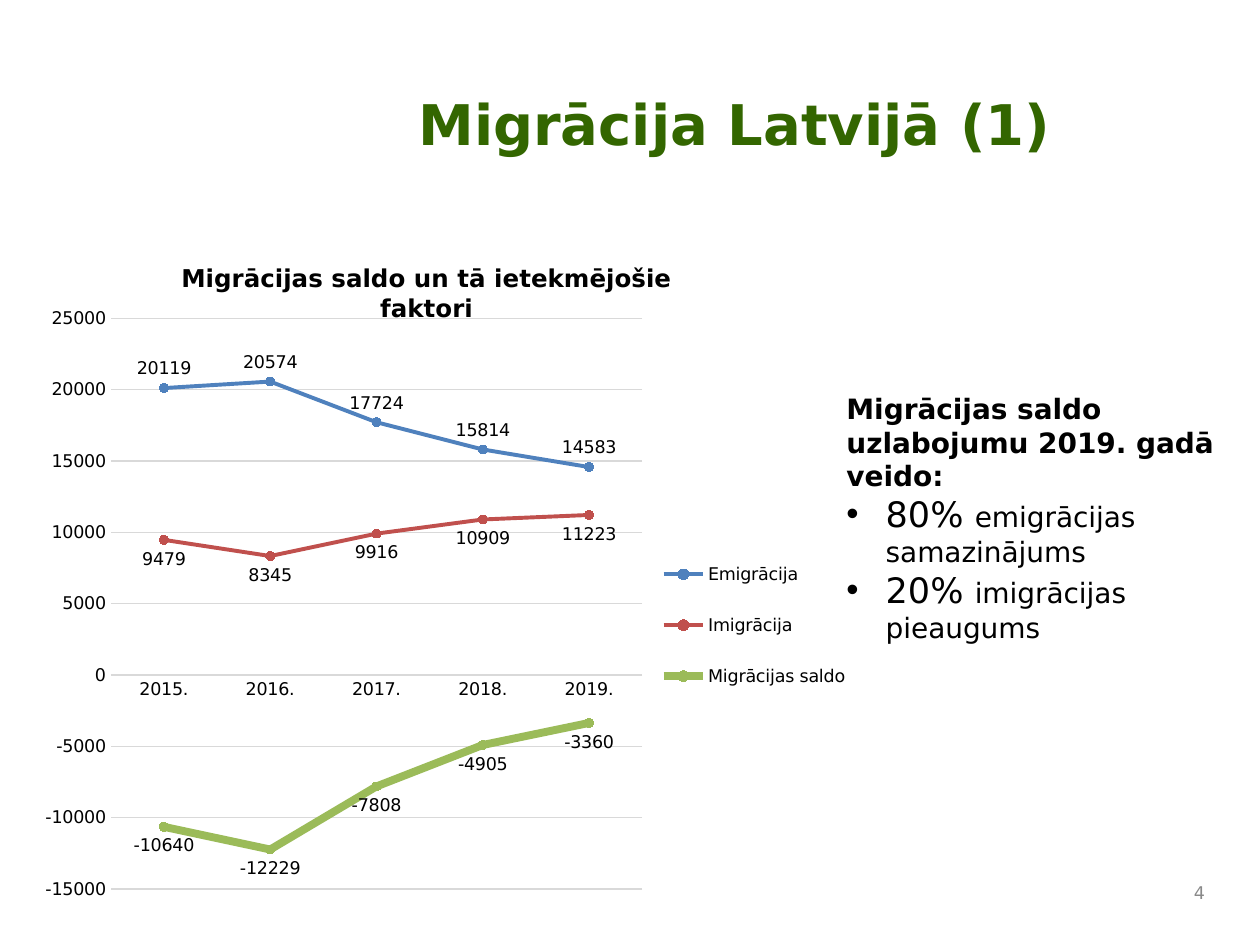
from lxml import etree
from pptx import Presentation
from pptx import util as u
from pptx.chart.data import CategoryChartData
from pptx.dml.color import RGBColor
from pptx.enum import chart as charts
from pptx.enum import text
from pptx.oxml import parse_xml
from pptx.oxml.ns import nsdecls, qn

BLACK, GREEN, GREY, GRID = "000000", "336600", "898989", "D9D9D9"
FONT = "DejaVu Sans"
YEARS = ["2015.", "2016.", "2017.", "2018.", "2019."]
ABOVE, BELOW = charts.XL_LABEL_POSITION.ABOVE, charts.XL_LABEL_POSITION.BELOW
# name, values, colour, line width, label position
SERIES = [
    ("Emigrācija", [20119, 20574, 17724, 15814, 14583], "4F81BD", 2.25, ABOVE),
    ("Imigrācija", [9479, 8345, 9916, 10909, 11223], "C0504D", 2.25, BELOW),
    ("Migrācijas saldo", [-10640, -12229, -7808, -4905, -3360], "9BBB59", 4.5, BELOW),
]
CAUSES = [("80% ", "emigrācijas samazinājums"), ("20% ", "imigrācijas pieaugums")]


def color(value):
    return RGBColor.from_string(value)


def set_all(target, values):
    for name, value in values.items():
        setattr(target, name, value)


def set_layout(element, index, sizes, inner=False):
    """Place a chart part by fractions of the chart: x, y, w, h."""
    for old in element.findall(qn("c:layout")):
        element.remove(old)
    target = '<c:layoutTarget val="inner"/>' if inner else ""
    modes = '<c:xMode val="edge"/><c:yMode val="edge"/>'
    parts = "".join(f'<c:{key} val="{size}"/>' for key, size in zip("xywh", sizes))
    element.insert(index, parse_xml(
        f'<c:layout {nsdecls("c")}><c:manualLayout>{target}{modes}{parts}'
        "</c:manualLayout></c:layout>"))


class SlideBuilder:
    def __init__(self, slide):
        self.slide = slide

    def font(self, font, size, bold=False, fill=BLACK):
        set_all(font, {"name": FONT, "size": u.Pt(size), "bold": bold})
        font.color.rgb = color(fill)

    def span(self, para, words, size, **style):
        span = para.add_run()
        span.text = words
        self.font(span.font, size, **style)

    def place(self, shape, left, top, width, height):
        set_all(shape, {"left": u.Cm(left), "top": u.Cm(top),
                        "width": u.Cm(width), "height": u.Cm(height)})

    def title(self, words, *area):
        shape = self.slide.shapes.title
        self.place(shape, *area)
        set_all(shape.text_frame, {"vertical_anchor": text.MSO_ANCHOR.MIDDLE,
                                   "auto_size": text.MSO_AUTO_SIZE.NONE})
        para = shape.text_frame.paragraphs[0]
        para.alignment = text.PP_ALIGN.CENTER
        self.span(para, words, 32, bold=True, fill=GREEN)

    def label(self, words, area, size, align, anchor, wrap=True, **style):
        box = self.slide.shapes.add_textbox(*map(u.Cm, area))
        set_all(box.text_frame, {"word_wrap": wrap, "vertical_anchor": anchor})
        para = box.text_frame.paragraphs[0]
        para.alignment = align
        self.span(para, words, size, **style)

    def body(self, lead, items, *area):
        shape = self.slide.placeholders[1]
        self.place(shape, *area)
        frame = shape.text_frame
        frame.auto_size = text.MSO_AUTO_SIZE.NONE
        self.list_para(frame.paragraphs[0], [(lead, 16, True)])
        for share, cause in items:
            self.list_para(frame.add_paragraph(),
                           [(share, 20, False), (cause, 16, False)], bullet="•")

    def list_para(self, para, spans, bullet=None):
        indent = u.Cm(0.79) if bullet else 0
        props = para._p.get_or_add_pPr()
        props.set("marL", str(indent))
        props.set("indent", str(-indent))
        mark = etree.SubElement(props, qn("a:buChar" if bullet else "a:buNone"))
        if bullet:
            mark.set("char", bullet)
        para.space_before = u.Pt(0)
        for words, size, bold in spans:
            self.span(para, words, size, bold=bold)

    def line_chart(self, *area):
        data = CategoryChartData(number_format="0")
        data.categories = YEARS
        for name, values, *_ in SERIES:
            data.add_series(name, values)
        chart = self.slide.shapes.add_chart(
            charts.XL_CHART_TYPE.LINE_MARKERS, *map(u.Cm, area), data).chart
        set_all(chart, {"has_title": False, "has_legend": True})
        self.font(chart.font, 10)
        set_all(chart.legend, {"position": charts.XL_LEGEND_POSITION.RIGHT,
                               "include_in_layout": False})
        self.font(chart.legend.font, 10)
        set_layout(chart.legend._element, 1, (0.75, 0.38, 0.25, 0.3))
        set_layout(chart._chartSpace.chart.plotArea, 0, (0.1, 0.03, 0.64, 0.93), inner=True)
        self.axes(chart)
        chart.plots[0].vary_by_categories = False
        for series, (_, _, fill, width, position) in zip(chart.plots[0].series, SERIES):
            self.series(series, fill, width, position)

    def axes(self, chart):
        for axis in (chart.category_axis, chart.value_axis):
            set_all(axis, {"major_tick_mark": charts.XL_TICK_MARK.NONE,
                           "minor_tick_mark": charts.XL_TICK_MARK.NONE})
            self.font(axis.tick_labels.font, 10)
        values = chart.value_axis
        set_all(values, {"minimum_scale": -15000, "maximum_scale": 25000,
                         "major_unit": 5000, "has_major_gridlines": True})
        set_all(values.tick_labels, {"number_format": "0", "number_format_is_linked": False})
        values.format.line.fill.background()
        for line in (chart.category_axis.format.line, values.major_gridlines.format.line):
            line.color.rgb = color(GRID)
            line.width = u.Pt(0.75)

    def series(self, series, fill, width, position):
        series.smooth = False
        series.format.line.color.rgb = color(fill)
        series.format.line.width = u.Pt(width)
        marker = series.marker
        set_all(marker, {"style": charts.XL_MARKER_STYLE.CIRCLE, "size": 5})
        marker.format.fill.solid()
        marker.format.fill.fore_color.rgb = color(fill)
        marker.format.line.color.rgb = color(fill)
        labels = series.data_labels
        set_all(labels, {"show_value": True, "position": position,
                         "number_format": "0", "number_format_is_linked": False})
        self.font(labels.font, 10)


def main():
    deck = Presentation()
    set_all(deck, {"slide_width": u.Cm(25.4), "slide_height": u.Cm(19.05)})
    page = SlideBuilder(deck.slides.add_slide(deck.slide_layouts[1]))
    page.title("Migrācija Latvijā (1)", 6.76, 1.04, 16.1, 2.87)
    page.label("4", (23.7, 17.58, 0.84, 0.84), 10, text.PP_ALIGN.RIGHT,
               text.MSO_ANCHOR.MIDDLE, fill=GREY)
    page.label("Migrācijas saldo un tā ietekmējošie faktori", (2.39, 5.18, 12.42, 0.86),
               14, text.PP_ALIGN.CENTER, text.MSO_ANCHOR.TOP, wrap=False, bold=True)
    page.body("Migrācijas saldo uzlabojumu 2019. gadā veido:", CAUSES,
              16.81, 7.77, 8.03, 5.38)
    page.line_chart(0.56, 6.05, 16.74, 12.37)
    deck.save("out.pptx")


if __name__ == "__main__":
    main()
